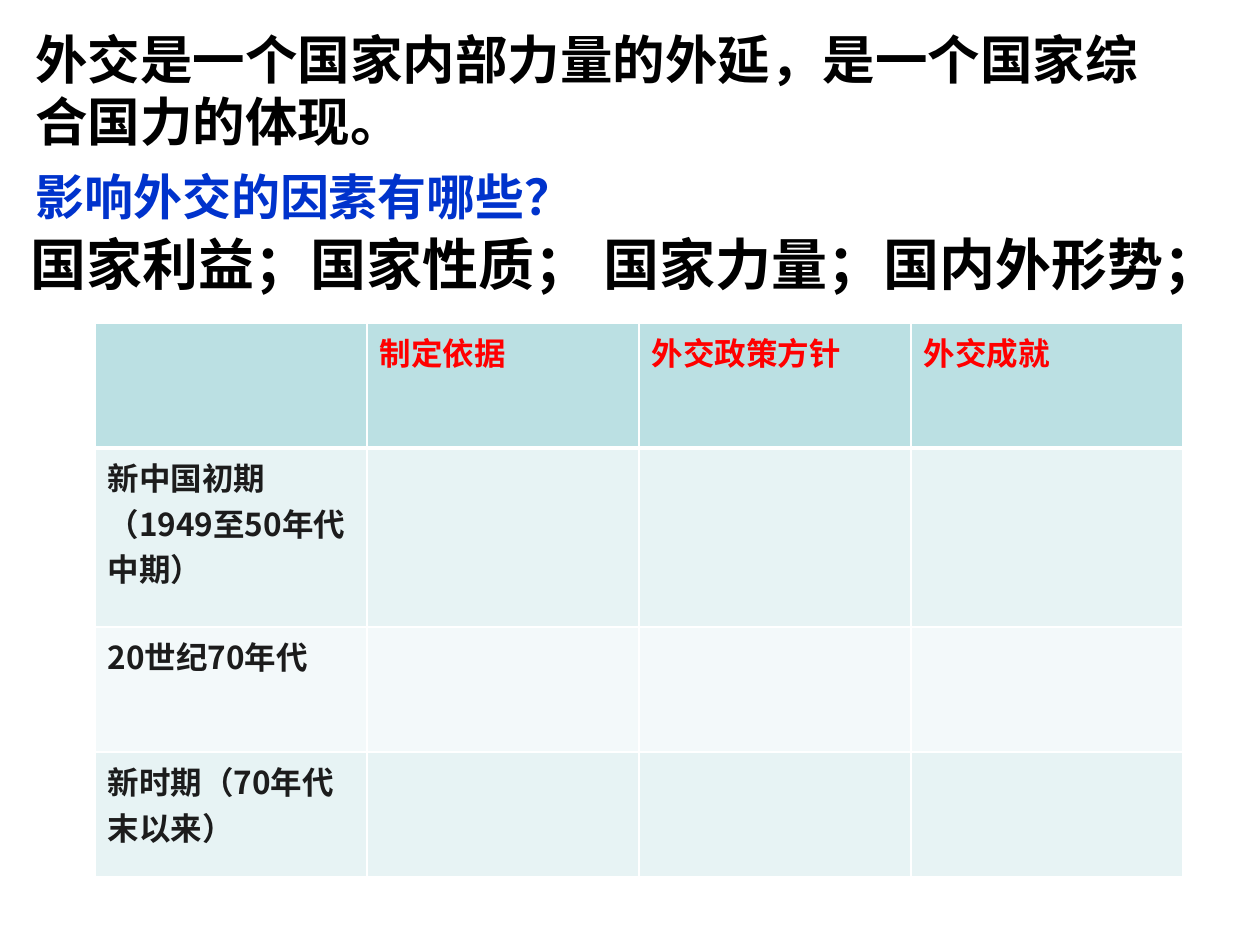
import pptx
import pptx.dml.color
import pptx.oxml
import pptx.oxml.ns
import pptx.util

PX = 914400 // 126
CJK = "Noto Sans CJK SC"
WHITE = "FFFFFF"
HEADER_FILL = "BBE0E3"
BAND_FILLS = ["E7F3F4", "F3F9FA"]
COL_WIDTH = 272
ROW_HEIGHTS = [125, 179, 125, 125]
HEADINGS = ["", "制定依据", "外交政策方针", "外交成就"]
PERIODS = ["新中国初期（1949至50年代中期）", "20世纪70年代", "新时期（70年代末以来）"]


def px(n):
    return pptx.util.Emu(n * PX)


def rgb(value):
    return pptx.dml.color.RGBColor.from_string(value)


def write(p, text, size, color, font):
    r = p.add_run()
    r.text = text
    p.font.size = pptx.util.Pt(size)
    p.font.bold = True
    p.font.name = font
    p.font.color.rgb = rgb(color)
    # Runs carry the East Asian typeface
    rpr = r.font._element
    ea = pptx.oxml.parse_xml(
        f'<a:ea {pptx.oxml.ns.nsdecls("a")} typeface="{CJK}"/>')
    rpr.append(ea)
    r.font.name = font
    r.font.size = pptx.util.Pt(size)
    r.font.bold = True
    r.font.color.rgb = rgb(color)


def add_text(slide, x, y, w, h, lines):
    """Each line is (text, size, color, font, line spacing, space before)."""
    tf = slide.shapes.add_textbox(px(x), px(y), px(w), px(h)).text_frame
    tf.word_wrap = True
    tf.margin_top = px(13)
    for i, (text, size, color, font, spacing, before) in enumerate(lines):
        p = tf.add_paragraph() if i else tf.paragraphs[0]
        p.line_spacing = pptx.util.Pt(spacing)
        p.space_before = pptx.util.Pt(before)
        write(p, text, size, color, font)


def style_cell(cell, fill, top=1, bottom=1):
    tcpr = cell._tc.get_or_add_tcPr()
    for side, width in zip("LRTB", (1, 1, top, bottom)):
        tcpr.append(pptx.oxml.parse_xml(
            f'<a:ln{side} {pptx.oxml.ns.nsdecls("a")} w="{width * 12700}">'
            f'<a:solidFill><a:srgbClr val="{WHITE}"/></a:solidFill>'
            f'</a:ln{side}>'))
    cell.fill.solid()
    cell.fill.fore_color.rgb = rgb(fill)


def add_policy_table(slide, x, y):
    rows, cols = len(ROW_HEIGHTS), len(HEADINGS)
    table = slide.shapes.add_table(
        rows, cols, px(x), px(y),
        px(COL_WIDTH * cols), px(sum(ROW_HEIGHTS))).table
    for col in table.columns:
        col.width = px(COL_WIDTH)
    for row, height in zip(table.rows, ROW_HEIGHTS):
        row.height = px(height)

    # Header row, with a thick rule below it
    for c, heading in enumerate(HEADINGS):
        cell = table.cell(0, c)
        style_cell(cell, HEADER_FILL, bottom=3)
        if heading:
            write(cell.text_frame.paragraphs[0], heading, 18, "FF0000", "Arial")

    # One banded row per period
    for r, period in enumerate(PERIODS, 1):
        for c in range(cols):
            style_cell(table.cell(r, c), BAND_FILLS[(r - 1) % 2],
                       top=3 if r == 1 else 1)
        write(table.cell(r, 0).text_frame.paragraphs[0],
              period, 18, "1C1C1C", CJK)


def main():
    prs = pptx.Presentation()
    prs.slide_width, prs.slide_height = px(1260), px(945)
    slide = prs.slides.add_slide(prs.slide_layouts[6])

    # Statement and question
    add_text(slide, 23, 15, 1171, 217, [
        ("外交是一个国家内部力量的外延，是一个国家综合国力的体现。",
         30, "000000", CJK, 35.5, 0),
        ("影响外交的因素有哪些？", 28, "0033CC", CJK, 33, 9),
    ])
    # Answer
    add_text(slide, 18, 218, 1225, 81, [
        ("国家利益；国家性质； 国家力量；国内外形势；",
         32, "000000", "Times New Roman", 37.5, 0),
    ])
    add_policy_table(slide, 95, 323)
    prs.save("out.pptx")


if __name__ == "__main__":
    main()
